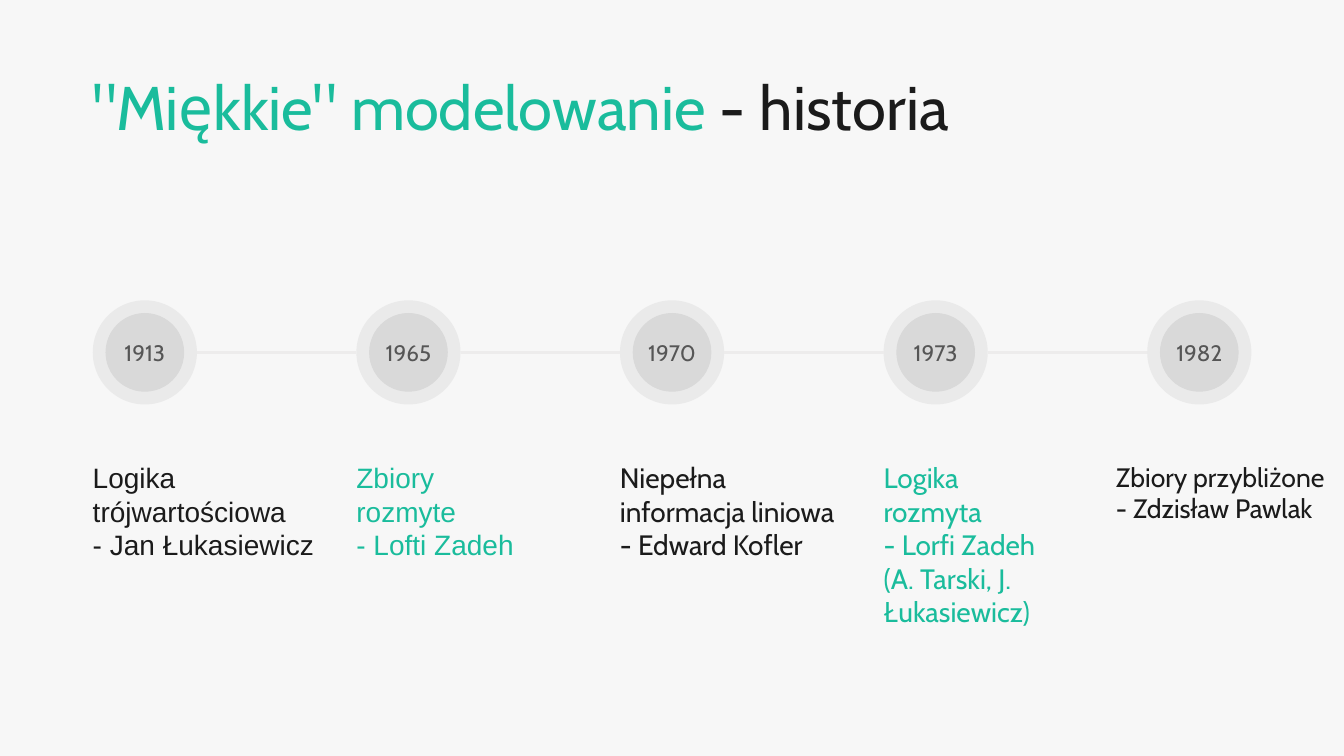
"""Builds a timeline slide on the history of soft modelling."""
import lxml.etree
import pptx
import pptx.dml.color
import pptx.enum.shapes
import pptx.enum.text
import pptx.oxml.ns
import pptx.util
from dataclasses import dataclass

Pt = pptx.util.Pt


@dataclass(frozen=True)
class Theme:
    background: str = "F7F7F7"
    dark: str = "1B1B1B"
    accent: str = "1ABC9C"
    marker: str = "D9D9D9"
    year: str = "565656"
    line: str = "EDECEC"
    font: str = "Cabin"
    plain_font: str = "Arial"
    title_size: float = 44
    label_size: float = 20
    small_label_size: float = 19
    year_size: float = 16


THEME = Theme()
LEFT, PITCH, CENTER_Y = 66.24, 188.3, 251.7
HALO, DISC = 74.4, 56.2
LABEL_TOP = 325.4

EVENTS = [
    ("1913", ["Logika trójwartościowa\v- Jan Łukasiewicz"],
     THEME.plain_font, THEME.label_size, THEME.dark, 0, 170, 79.2),
    ("1965", ["Zbiory rozmyte\v- Lofti Zadeh"],
     THEME.plain_font, THEME.label_size, THEME.accent, 0, 121.7, 79.2),
    ("1970", ["Niepełna informacja liniowa", "- Edward Kofler"],
     THEME.font, THEME.label_size, THEME.dark, 0, 172.8, 84.2),
    ("1973", ["Logika rozmyta\v- Lorfi Zadeh", "(A. Tarski, J. Łukasiewicz)"],
     THEME.font, THEME.label_size, THEME.accent, 0, 121.7, 132.5),
    ("1982", ["Zbiory przybliżone\v- Zdzisław Pawlak"],
     THEME.font, THEME.small_label_size, THEME.dark, -22.4, 180, 57.6),
]


def set_attributes(target, values):
    """Apply a dict of format values to an object."""
    for name, value in values.items():
        setattr(target, name, value)


def color(value):
    """Turn a hex string into a colour."""
    return pptx.dml.color.RGBColor.from_string(value)


def style_run(run, font, size, fill):
    """Set the typeface, size and colour of a run."""
    set_attributes(run.font, {"name": font, "size": Pt(size)})
    run.font.color.rgb = color(fill)


def add_text_box(slide, left, top, width, height):
    """Add an empty wrapping text box and return its text frame."""
    box = slide.shapes.add_textbox(Pt(left), Pt(top), Pt(width), Pt(height))
    set_attributes(box.text_frame, {
        "word_wrap": True,
        "auto_size": pptx.enum.text.MSO_AUTO_SIZE.SHAPE_TO_FIT_TEXT,
        "margin_left": 0, "margin_right": Pt(7.2),
        "margin_top": Pt(3.6), "margin_bottom": Pt(3.6),
    })
    return box.text_frame


def add_title(slide, parts):
    """Add the title from pairs of text and colour."""
    paragraph = add_text_box(slide, LEFT, 51.8, 640.8, 69.8).paragraphs[0]
    set_attributes(paragraph, {"line_spacing": 0.9, "space_before": Pt(10)})
    for text, fill in parts:
        run = paragraph.add_run()
        run.text = text
        style_run(run, THEME.font, THEME.title_size, fill)


def add_label(slide, left, width, height, lines, font, size, fill):
    """Add the description under a marker."""
    frame = add_text_box(slide, left, LABEL_TOP, width, height)
    frame.text = "\n".join(lines)
    for paragraph in frame.paragraphs:
        for run in paragraph.runs:
            style_run(run, font, size, fill)


def add_circle(group, center_x, diameter):
    """Add a plain circle centred on the timeline."""
    shape = group.shapes.add_shape(
        pptx.enum.shapes.MSO_SHAPE.OVAL, Pt(center_x - diameter / 2),
        Pt(CENTER_Y - diameter / 2), Pt(diameter), Pt(diameter))
    shape.shadow.inherit = False
    shape.fill.solid()
    shape.fill.fore_color.rgb = color(THEME.marker)
    shape.line.fill.background()
    return shape


def add_marker(slide, left, year):
    """Add a grouped disc and translucent halo carrying the year."""
    group = slide.shapes.add_group_shape()
    center_x = left + HALO / 2
    add_circle(group, center_x, DISC)
    halo = add_circle(group, center_x, HALO)
    fill = halo.fill.fore_color._xFill[0]
    lxml.etree.SubElement(fill, pptx.oxml.ns.qn("a:alpha"), val="42000")
    halo.text_frame.vertical_anchor = pptx.enum.text.MSO_ANCHOR.MIDDLE
    paragraph = halo.text_frame.paragraphs[0]
    set_attributes(paragraph, {
        "text": year, "alignment": pptx.enum.text.PP_ALIGN.CENTER})
    style_run(paragraph.runs[0], THEME.font, THEME.year_size, THEME.year)


def add_link(slide, start, end):
    """Add a horizontal line between two markers."""
    link = slide.shapes.add_connector(
        pptx.enum.shapes.MSO_CONNECTOR.STRAIGHT,
        Pt(start), Pt(CENTER_Y), Pt(end), Pt(CENTER_Y))
    link.line.color.rgb = color(THEME.line)
    link.line.width = Pt(2.25)
    properties = link._element.spPr
    lxml.etree.SubElement(properties, pptx.oxml.ns.qn("a:effectLst"))


def main():
    """Build and save the slide."""
    presentation = pptx.Presentation()
    set_attributes(presentation, {
        "slide_width": Pt(960), "slide_height": Pt(540)})
    slide = presentation.slides.add_slide(presentation.slide_layouts[6])
    slide.background.fill.solid()
    slide.background.fill.fore_color.rgb = color(THEME.background)

    for index, event in enumerate(EVENTS):
        year, lines, font, size, fill, shift, width, height = event
        left = LEFT + index * PITCH
        add_marker(slide, left, year)
        add_label(slide, left + shift, width, height, lines, font, size, fill)
        if index:
            add_link(slide, left - PITCH + HALO, left)

    add_title(slide, [('"Miękkie" modelowanie ', THEME.accent),
                      ("- historia", THEME.dark)])
    presentation.save("out.pptx")


if __name__ == "__main__":
    main()
